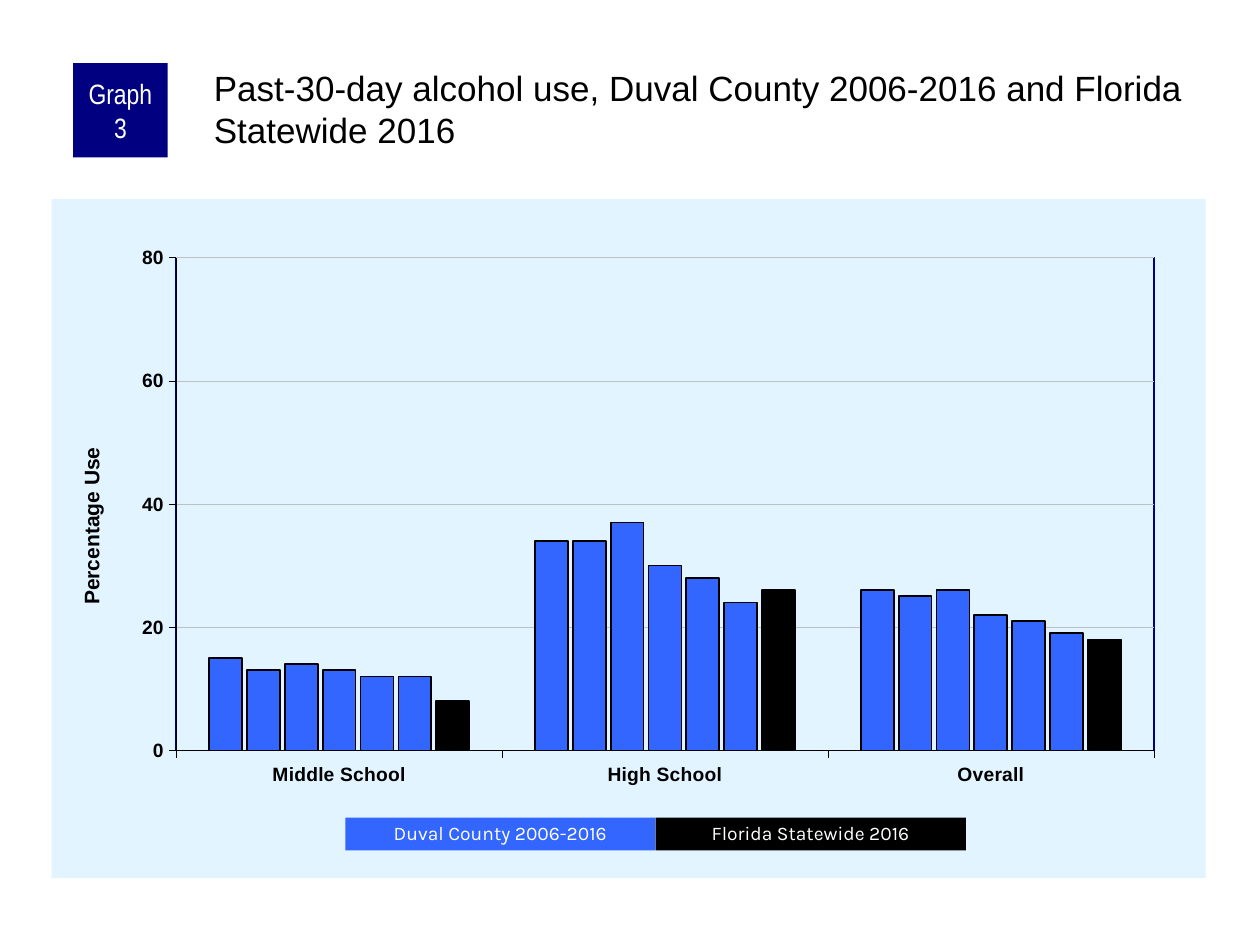
from lxml import etree
from pptx import Presentation
from pptx.chart.data import CategoryChartData
from pptx.dml.color import RGBColor
from pptx.enum.chart import XL_CHART_TYPE, XL_TICK_MARK
from pptx.enum.shapes import MSO_SHAPE
from pptx.enum.text import MSO_ANCHOR, PP_ALIGN
from pptx.oxml import parse_xml
from pptx.oxml.ns import nsdecls, qn
from pptx.util import Pt

# Content
TITLE = "Past-30-day alcohol use, Duval County 2006-2016 and Florida Statewide 2016"
BADGE = "Graph 3"
AXIS_TITLE = "Percentage Use"
LEVELS = ["Middle School", "High School", "Overall"]
USE = [
    # values by level, colour
    ((15, 34, 26), "county"),
    ((13, 34, 25), "county"),
    ((14, 37, 26), "county"),
    ((13, 30, 22), "county"),
    ((12, 28, 21), "county"),
    ((12, 24, 19), "county"),
    ((8, 26, 18), "state"),
]
KEY = [("Duval County 2006-2016", "county"), ("Florida Statewide 2016", "state")]
COLORS = {
    "county": "3366FF", "state": "000000", "badge": "000080", "panel": "E1F4FF",
    "grid": "C0C0C0", "text": "000000", "white": "FFFFFF",
}

# Places in points: left, top, width, height
CHART_BOX = (29.5, 113.8, 659.5, 388)
BADGE_BOX = (41.8, 36, 54, 54)
TITLE_BOX = (120.2, 36, 570.2, 59.8)
KEY_BOX = (197.3, 467.3, 177.3, 18.7)


def color(name):
    return RGBColor.from_string(COLORS[name])


def style_font(font, size, face, name, bold=False):
    font.size, font.name, font.bold = Pt(size), face, bold
    font.color.rgb = color(name)


def style_line(line, name, width):
    line.color.rgb = color(name)
    line.width = Pt(width)


def set_insets(frame, left, top, right, bottom):
    frame.margin_left, frame.margin_top = Pt(left), Pt(top)
    frame.margin_right, frame.margin_bottom = Pt(right), Pt(bottom)


def add_label(slide, box, text, fill, size, face):
    label = slide.shapes.add_shape(MSO_SHAPE.RECTANGLE, *map(Pt, box))
    label.shadow.inherit = False
    label.fill.solid()
    label.fill.fore_color.rgb = color(fill)
    label.line.fill.background()
    frame = label.text_frame
    frame.word_wrap = True
    frame.vertical_anchor = MSO_ANCHOR.MIDDLE
    set_insets(frame, 3.6, 0, 3.6, 0)
    frame.text = text
    paragraph = frame.paragraphs[0]
    paragraph.alignment = PP_ALIGN.CENTER
    style_font(paragraph.runs[0].font, size, face, "white")
    return paragraph


def manual_layout(inner=False, **place):
    layout = parse_xml(f'<c:layout {nsdecls("c")}><c:manualLayout/></c:layout>')
    settings = {"layoutTarget": "inner"} if inner else {}
    settings.update(xMode="edge", yMode="edge", **place)
    for tag, value in settings.items():
        etree.SubElement(layout[0], qn(f"c:{tag}")).set("val", str(value))
    return layout


def replace_layout(parent, layout, index):
    for old in parent.findall(qn("c:layout")):
        parent.remove(old)
    parent.insert(index, layout)


def area_format(fill, line):
    return parse_xml(f'<c:spPr {nsdecls("c", "a")}>{fill}{line}</c:spPr>')


def solid(name):
    return f'<a:solidFill><a:srgbClr val="{COLORS[name]}"/></a:solidFill>'


presentation = Presentation()
presentation.slide_width, presentation.slide_height = Pt(720), Pt(540)
slide = presentation.slides.add_slide(presentation.slide_layouts[5])

# Title
title = slide.shapes.title
title.left, title.top, title.width, title.height = map(Pt, TITLE_BOX)
title.text_frame.text = TITLE
title.text_frame.word_wrap = True
title.text_frame.vertical_anchor = MSO_ANCHOR.TOP
set_insets(title.text_frame, 2, 2, 0, 0)
heading = title.text_frame.paragraphs[0]
heading.alignment = PP_ALIGN.LEFT
style_font(heading.runs[0].font, 20, "Arial", "text")

# Chart
data = CategoryChartData()
data.categories = LEVELS
for number, (values, _) in enumerate(USE, 1):
    data.add_series(f"Series {number}", values)
chart = slide.shapes.add_chart(
    XL_CHART_TYPE.COLUMN_CLUSTERED, *map(Pt, CHART_BOX), data).chart
style_font(chart.font, 8, "Arial", "text")
chart.has_legend = False
chart.has_title = False

plot = chart.plots[0]
plot.gap_width, plot.overlap = 200, -15
plot.vary_by_categories = False
for series, (_, name) in zip(plot.series, USE):
    series.format.fill.solid()
    series.format.fill.fore_color.rgb = color(name)
    style_line(series.format.line, "text", 1)

# Axes
percent = chart.value_axis
for axis in (chart.category_axis, percent):
    axis.major_tick_mark = XL_TICK_MARK.OUTSIDE
    axis.minor_tick_mark = XL_TICK_MARK.NONE
    style_font(axis.tick_labels.font, 11, "Arial", "text", True)
    style_line(axis.format.line, "text", 0.25)
percent.minimum_scale, percent.maximum_scale, percent.major_unit = 0, 80, 20
percent.has_major_gridlines = True
style_line(percent.major_gridlines.format.line, "grid", 0.25)
axis_title = percent.axis_title.text_frame
axis_title.text = AXIS_TITLE
style_font(axis_title.paragraphs[0].runs[0].font, 12, "Arial", "text", True)

# Panel fill, plot frame and fixed positions
space = chart.element
space.find(qn("c:chart")).addnext(
    area_format(solid("panel"), "<a:ln><a:noFill/></a:ln>"))
plot_area = space.find(".//" + qn("c:plotArea"))
plot_area.append(area_format(
    "<a:noFill/>", f'<a:ln w="{Pt(1)}">{solid("badge")}</a:ln>'))
replace_layout(plot_area, manual_layout(True, x=0.108, y=0.086, w=0.847, h=0.726), 0)
replace_layout(plot_area.find(".//" + qn("c:title")), manual_layout(x=0.02, y=0.36), 1)

# Graph number
add_label(slide, BADGE_BOX, BADGE, "badge", 16, "Arial Narrow")

# Colour key
key_left, key_top, key_width, key_height = KEY_BOX
for index, (text, name) in enumerate(KEY):
    box = (key_left + index * key_width, key_top, key_width, key_height)
    add_label(slide, box, text, name, 11, "Karla").line_spacing = 0.9

presentation.save("out.pptx")
